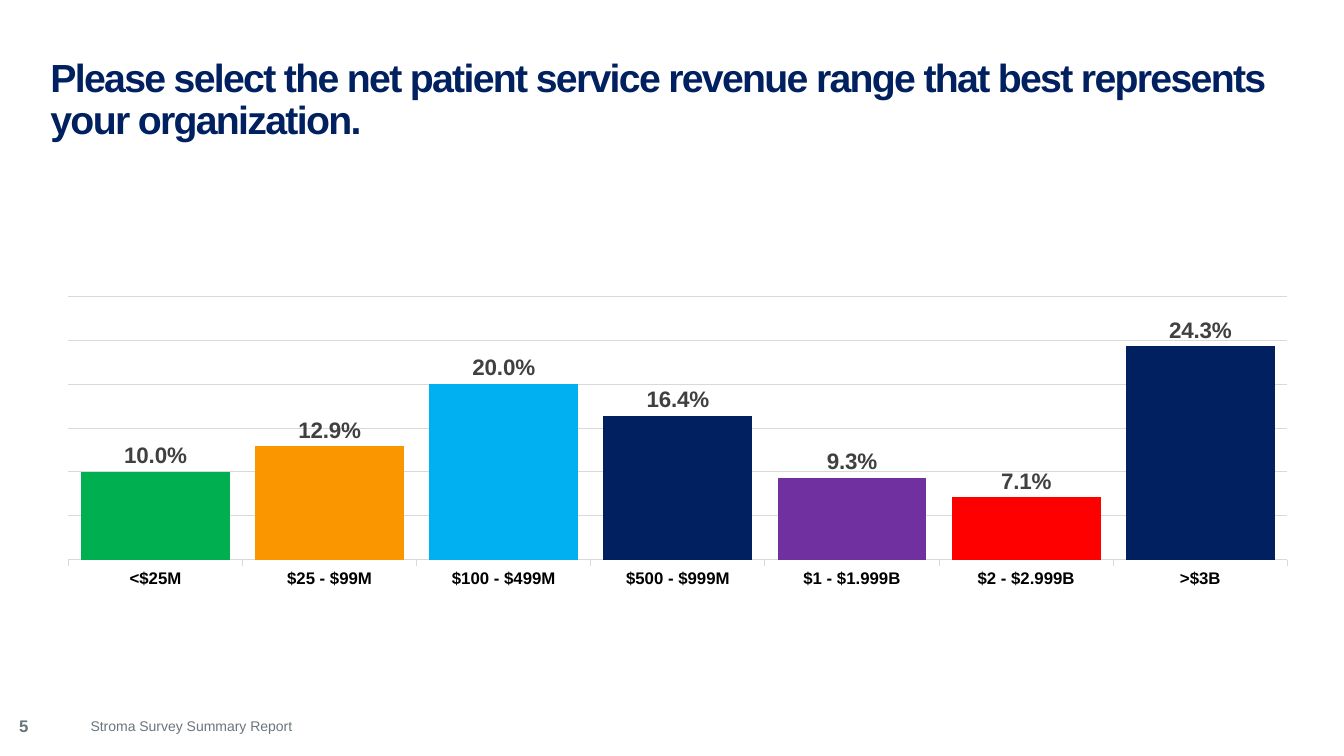
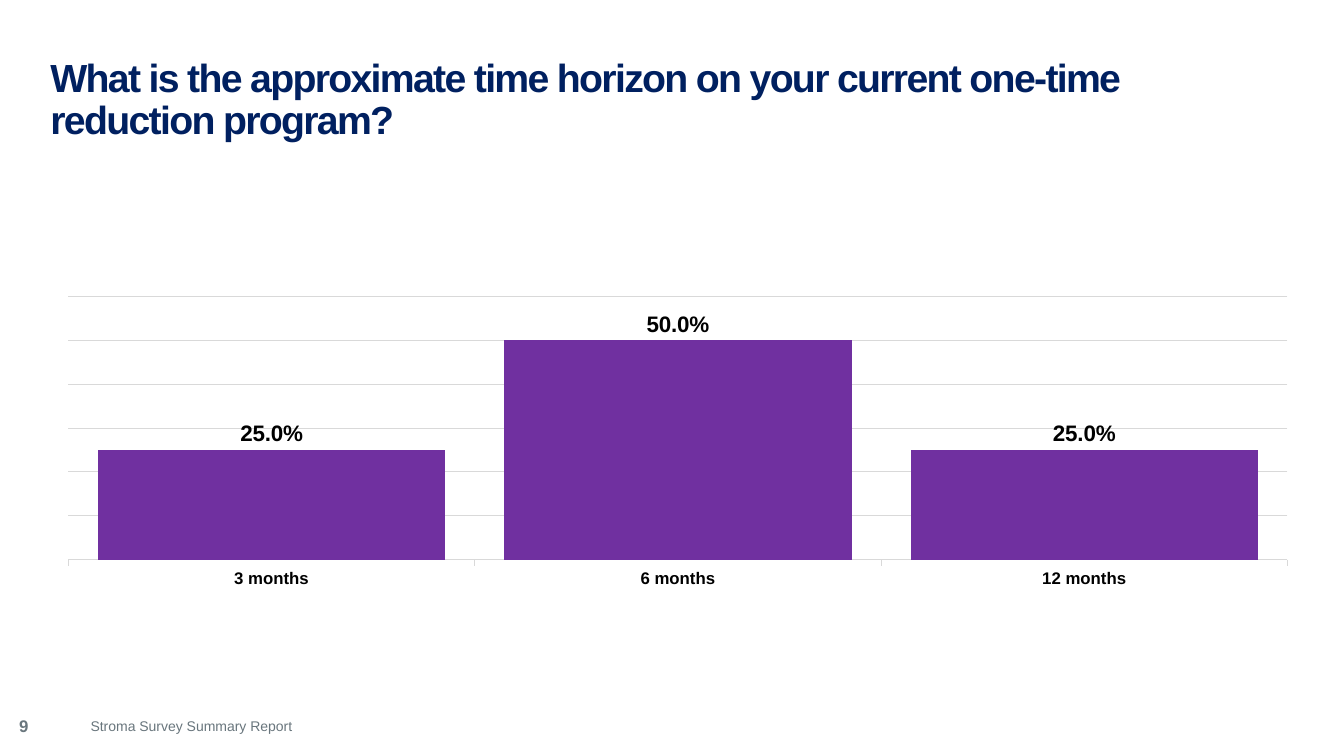
from lxml.etree import SubElement
from pptx import Presentation
from pptx.chart.data import CategoryChartData
from pptx.dml.color import RGBColor
from pptx.enum.chart import XL_CHART_TYPE, XL_LABEL_POSITION, XL_TICK_LABEL_POSITION, XL_TICK_MARK
from pptx.enum.text import MSO_ANCHOR, MSO_AUTO_SIZE, PP_ALIGN
from pptx.oxml.ns import qn
from pptx.util import Inches, Pt

FONT = "Arial"
COLORS = {
    "navy": "002060",
    "green": "00B050",
    "orange": "FA9600",
    "sky": "00B0F0",
    "purple": "7030A0",
    "red": "FF0000",
    "footer": "69767D",
    "grid": "D9D9D9",
    "dark": "404040",
    "black": "000000",
}
FOOTER = "Stroma Survey Summary Report"
PLOT_LAYOUT = {
    "layoutTarget": "inner",
    "xMode": "edge",
    "yMode": "edge",
    "x": 0.012,
    "y": 0.145,
    "w": 0.975,
    "h": 0.621,
}
SURVEY = [
    {
        "number": 5,
        "title": "Please select the net patient service revenue range that best represents your organization.",
        "answers": {
            "<$25M": (0.1, "green"),
            "$25 - $99M": (0.129, "orange"),
            "$100 - $499M": (0.2, "sky"),
            "$500 - $999M": (0.164, "navy"),
            "$1 - $1.999B": (0.093, "purple"),
            "$2 - $2.999B": (0.071, "red"),
            ">$3B": (0.243, "navy"),
        },
        "step": 0.05,
        "label_color": "dark",
    },
    {
        "number": 9,
        "title": "What is the approximate time horizon on your current one-time reduction program?",
        "answers": {
            "3 months": (0.25, "purple"),
            "6 months": (0.5, "purple"),
            "12 months": (0.25, "purple"),
        },
        "step": 0.1,
        "label_color": "black",
    },
]


def rgb(name):
    return RGBColor.from_string(COLORS[name])


def style_font(font, size, color, bold=False):
    font.name = FONT
    font.size = Pt(size)
    font.bold = bold
    font.color.rgb = rgb(color)


def style_line(line):
    line.color.rgb = rgb("grid")
    line.width = Pt(0.75)


def add_title(page, text):
    title = page.shapes.title
    title.left, title.top = Inches(0.5), Inches(0.5)
    title.width, title.height = Inches(12.3), Inches(1)
    frame = title.text_frame
    frame.text = text
    frame.word_wrap = True
    frame.auto_size = MSO_AUTO_SIZE.NONE
    frame.vertical_anchor = MSO_ANCHOR.MIDDLE
    frame.margin_left = frame.margin_right = frame.margin_top = frame.margin_bottom = 0
    para = frame.paragraphs[0]
    para.alignment = PP_ALIGN.LEFT
    para.line_spacing = 0.9
    span = para.runs[0]
    style_font(span.font, 28, "navy", True)
    span.font._element.set("spc", "-120")


def add_label(page, text, left, top, width, height, size, bold=False):
    box = page.shapes.add_textbox(Inches(left), Inches(top), Inches(width), Inches(height))
    frame = box.text_frame
    frame.word_wrap = True
    frame.text = text
    style_font(frame.paragraphs[0].runs[0].font, size, "footer", bold)


def add_footer(page, number):
    add_label(page, str(number), 0.09, 7.05, 0.45, 0.3, 12, True)
    add_label(page, FOOTER, 0.8, 7.07, 9.75, 0.27, 10)


def place_plot(chart):
    plot_area = chart.element.find(".//" + qn("c:plotArea"))
    for old in plot_area.findall(qn("c:layout")):
        plot_area.remove(old)
    layout = SubElement(plot_area, qn("c:layout"))
    plot_area.insert(0, layout)
    manual = SubElement(layout, qn("c:manualLayout"))
    for tag, value in PLOT_LAYOUT.items():
        SubElement(manual, qn("c:" + tag)).set("val", str(value))


def style_axes(chart, step):
    category_axis = chart.category_axis
    category_axis.major_tick_mark = XL_TICK_MARK.OUTSIDE
    category_axis.tick_label_position = XL_TICK_LABEL_POSITION.LOW
    style_font(category_axis.tick_labels.font, 12, "black", True)
    style_line(category_axis.format.line)
    value_axis = chart.value_axis
    value_axis.minimum_scale = 0
    value_axis.maximum_scale = round(step * 6, 2)
    value_axis.major_unit = step
    value_axis.has_major_gridlines = True
    style_line(value_axis.major_gridlines.format.line)
    value_axis.visible = False


def style_columns(plot, colors, label_color):
    plot.gap_width = 17
    plot.overlap = -27
    plot.vary_by_categories = False
    series = plot.series[0]
    series.invert_if_negative = False
    for index, color in enumerate(colors):
        fill = series.points[index].format.fill
        fill.solid()
        fill.fore_color.rgb = rgb(color)
    labels = series.data_labels
    labels.show_value = True
    labels.position = XL_LABEL_POSITION.OUTSIDE_END
    labels.number_format = "0.0%"
    labels.number_format_is_linked = False
    style_font(labels.font, 16, label_color, True)


def add_column_chart(page, answers, step, label_color):
    values, colors = zip(*answers.values())
    data = CategoryChartData(number_format="0.0%")
    data.categories = list(answers)
    data.add_series("Series 1", values)
    chart = page.shapes.add_chart(
        XL_CHART_TYPE.COLUMN_CLUSTERED,
        Inches(0.53), Inches(2.33), Inches(12.4), Inches(4.21), data,
    ).chart
    chart.has_title = False
    chart.has_legend = False
    style_font(chart.font, 10, "black")
    place_plot(chart)
    style_axes(chart, step)
    style_columns(chart.plots[0], colors, label_color)


def add_question(deck, number, title, answers, step, label_color):
    page = deck.slides.add_slide(deck.slide_layouts.get_by_name("Title Only"))
    add_footer(page, number)
    add_title(page, title)
    add_column_chart(page, answers, step, label_color)


def main():
    deck = Presentation()
    deck.slide_width, deck.slide_height = Inches(13.33), Inches(7.5)
    for question in SURVEY:
        add_question(deck, **question)
    deck.save("out.pptx")


if __name__ == "__main__":
    main()
